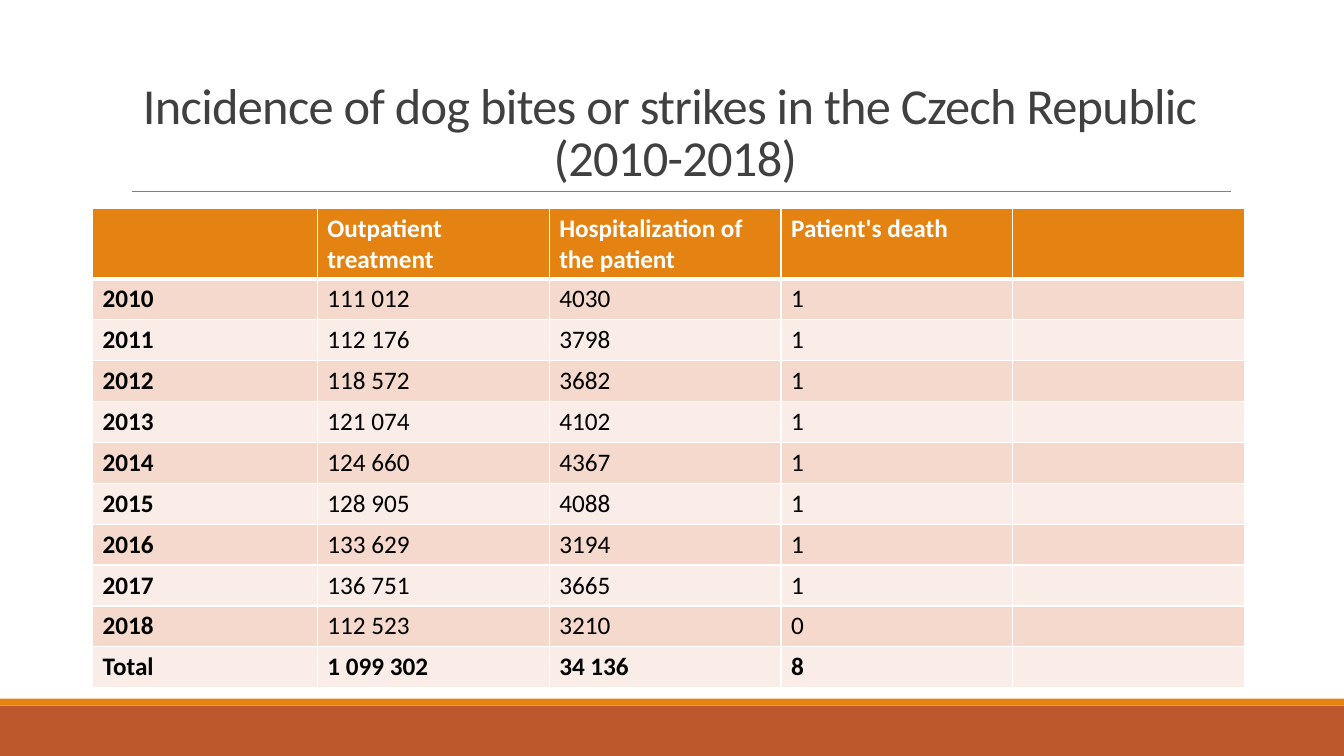
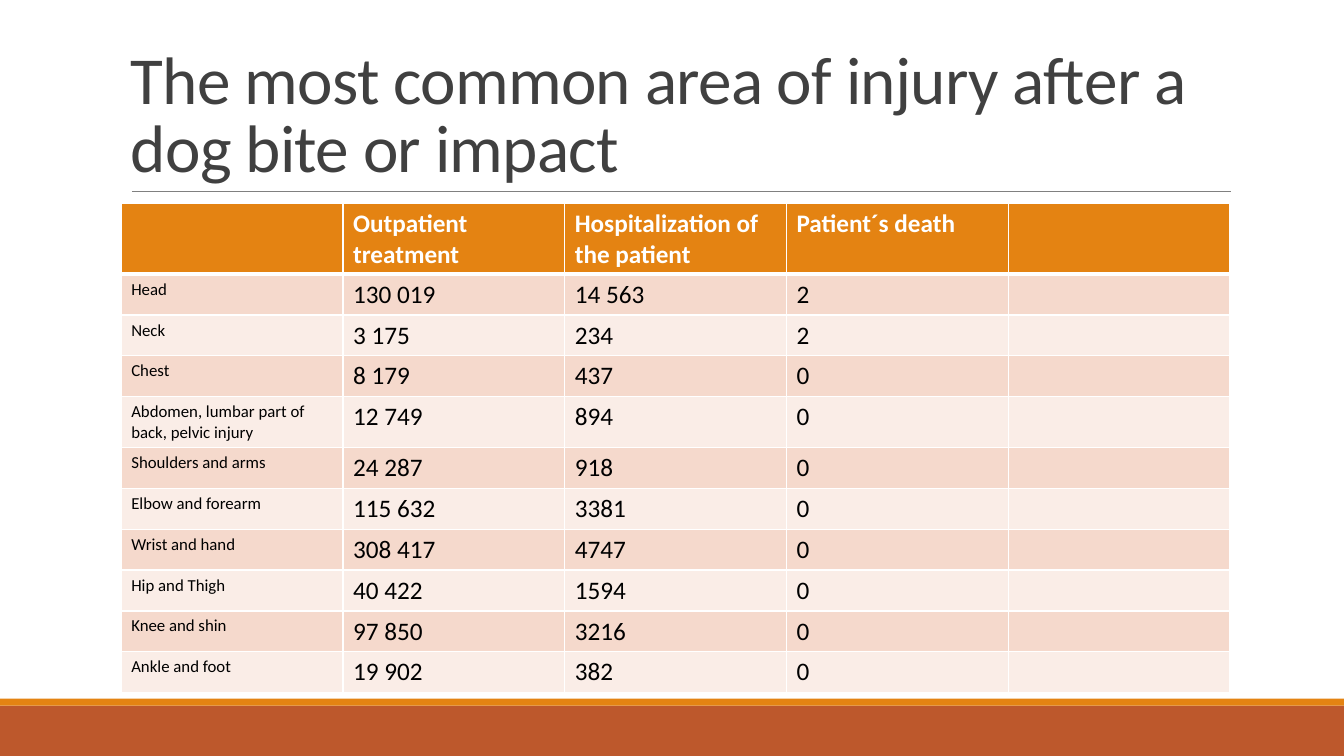
from lxml.etree import SubElement
from pptx import Presentation
from pptx.dml.color import RGBColor
from pptx.enum.shapes import MSO_CONNECTOR, MSO_SHAPE
from pptx.enum.text import MSO_ANCHOR, PP_ALIGN
from pptx.oxml.ns import qn
from pptx.util import Pt

# Shared look
FONT = "Calibri"
WHITE, BLACK, TITLE_GREY, RULE_GREY = "FFFFFF", "000000", "404040", "808080"
ORANGE, RUST = "E48312", "BD582C"
BANDS = ("F5D9CC", "FAEDE7")
WIDTH, HEIGHT = 960, 540
FOOTER = ((504, 36, RUST), (499, 5, ORANGE))  # top, height, colour
HEADER_HEIGHT, ROW_HEIGHT = 50.4, 29.2

# Content
PAGES = [
    {
        "title": "Incidence of dog bites or strikes in the Czech Republic \v(2010-2018)",
        "title_size": 36,
        "title_align": PP_ALIGN.CENTER,
        "left": 66.2,
        "top": 148.8,
        "columns": (160.5, 165.6, 165.6, 165.6, 165.6),
        "label_size": 18,
        "label_bold": True,
        "tall_rows": {},
        "rows": [
            ("", "Outpatient treatment", "Hospitalization of the patient", "Patient's death", ""),
            ("2010", "111 012", "4030", "1", ""),
            ("2011", "112 176", "3798", "1", ""),
            ("2012", "118 572", "3682", "1", ""),
            ("2013", "121 074", "4102", "1", ""),
            ("2014", "124 660", "4367", "1", ""),
            ("2015", "128 905", "4088", "1", ""),
            ("2016", "133 629", "3194", "1", ""),
            ("2017", "136 751", "3665", "1", ""),
            ("2018", "112 523", "3210", "0", ""),
            ("Total", "1 099 302", "34 136", "8", ""),
        ],
    },
    {
        "title": "The most common area of injury after a dog bite or impact",
        "title_size": 48,
        "title_align": PP_ALIGN.LEFT,
        "left": 86.6,
        "top": 145.4,
        "columns": (158.4,) * 5,
        "label_size": 12,
        "label_bold": False,
        "tall_rows": {4: 36.2},
        "rows": [
            ("", "Outpatient treatment", "Hospitalization of the patient", "Patient´s death", ""),
            ("Head", "130 019", "14 563", "2", ""),
            ("Neck", "3 175", "234", "2", ""),
            ("Chest", "8 179", "437", "0", ""),
            ("Abdomen, lumbar part of back, pelvic injury", "12 749", "894", "0", ""),
            ("Shoulders and arms", "24 287", "918", "0", ""),
            ("Elbow and forearm", "115 632", "3381", "0", ""),
            ("Wrist and hand", "308 417", "4747", "0", ""),
            ("Hip and Thigh", "40 422", "1594", "0", ""),
            ("Knee and shin", "97 850", "3216", "0", ""),
            ("Ankle and foot", "19 902", "382", "0", ""),
        ],
    },
]


def color(value):
    return RGBColor.from_string(value)


def style_runs(paragraph, size, text_color, bold=False):
    for span in paragraph.runs:
        span.font.name = FONT
        span.font.size = Pt(size)
        span.font.bold = bold
        span.font.color.rgb = color(text_color)


def add_frame(page):
    """Footer bands and the rule under the title."""
    for top, height, fill in FOOTER:
        band = page.shapes.add_shape(MSO_SHAPE.RECTANGLE, 0, Pt(top), Pt(WIDTH), Pt(height))
        band.shadow.inherit = False
        band.fill.solid()
        band.fill.fore_color.rgb = color(fill)
        band.line.fill.background()
    rule = page.shapes.add_connector(
        MSO_CONNECTOR.STRAIGHT, Pt(94.3), Pt(136.8), Pt(879), Pt(136.8))
    rule.line.color.rgb = color(RULE_GREY)
    rule.line.width = Pt(0.5)
    SubElement(rule._element.spPr, qn("a:effectLst"))


def add_title(page, content):
    box = page.shapes.add_textbox(Pt(86.4), Pt(22.3), Pt(792), Pt(114.5))
    frame = box.text_frame
    frame.word_wrap = True
    frame.vertical_anchor = MSO_ANCHOR.BOTTOM
    frame.text = content["title"]
    para = frame.paragraphs[0]
    para.alignment = content["title_align"]
    para.line_spacing = 0.85
    style_runs(para, content["title_size"], TITLE_GREY)
    for span in para.runs:
        span.font._element.set("spc", "-50")


def add_borders(cell, row_index):
    """White cell borders, heavier between header and body."""
    widths = {"L": 1, "R": 1,
              "T": 3 if row_index == 1 else 1,
              "B": 3 if row_index == 0 else 1}
    properties = cell._tc.get_or_add_tcPr()
    for side, width in widths.items():
        line = SubElement(properties, qn(f"a:ln{side}"), w=str(Pt(width)))
        fill = SubElement(line, qn("a:solidFill"))
        SubElement(fill, qn("a:srgbClr"), val=WHITE)


def add_data_table(page, content):
    rows, columns = content["rows"], content["columns"]
    heights = [HEADER_HEIGHT] + [
        content["tall_rows"].get(index, ROW_HEIGHT) for index in range(1, len(rows))]
    table = page.shapes.add_table(
        len(rows), len(columns), Pt(content["left"]), Pt(content["top"]),
        Pt(sum(columns)), Pt(sum(heights))).table
    table.horz_banding = False
    for column, width in zip(table.columns, columns):
        column.width = Pt(width)
    for row_index, (row, values) in enumerate(zip(table.rows, rows)):
        row.height = Pt(heights[row_index])
        is_header, is_total = row_index == 0, values[0] == "Total"
        for column_index, (cell, value) in enumerate(zip(row.cells, values)):
            is_label = column_index == 0
            add_borders(cell, row_index)
            cell.fill.solid()
            cell.fill.fore_color.rgb = color(ORANGE if is_header else BANDS[(row_index - 1) % 2])
            cell.text_frame.text = value
            style_runs(
                cell.text_frame.paragraphs[0],
                content["label_size"] if is_label else 18,
                WHITE if is_header else BLACK,
                is_header or is_total or (is_label and content["label_bold"]))


def main():
    deck = Presentation()
    deck.slide_width, deck.slide_height = Pt(WIDTH), Pt(HEIGHT)
    for content in PAGES:
        page = deck.slides.add_slide(deck.slide_layouts[6])
        add_frame(page)
        add_title(page, content)
        add_data_table(page, content)
    deck.save("out.pptx")


if __name__ == "__main__":
    main()
